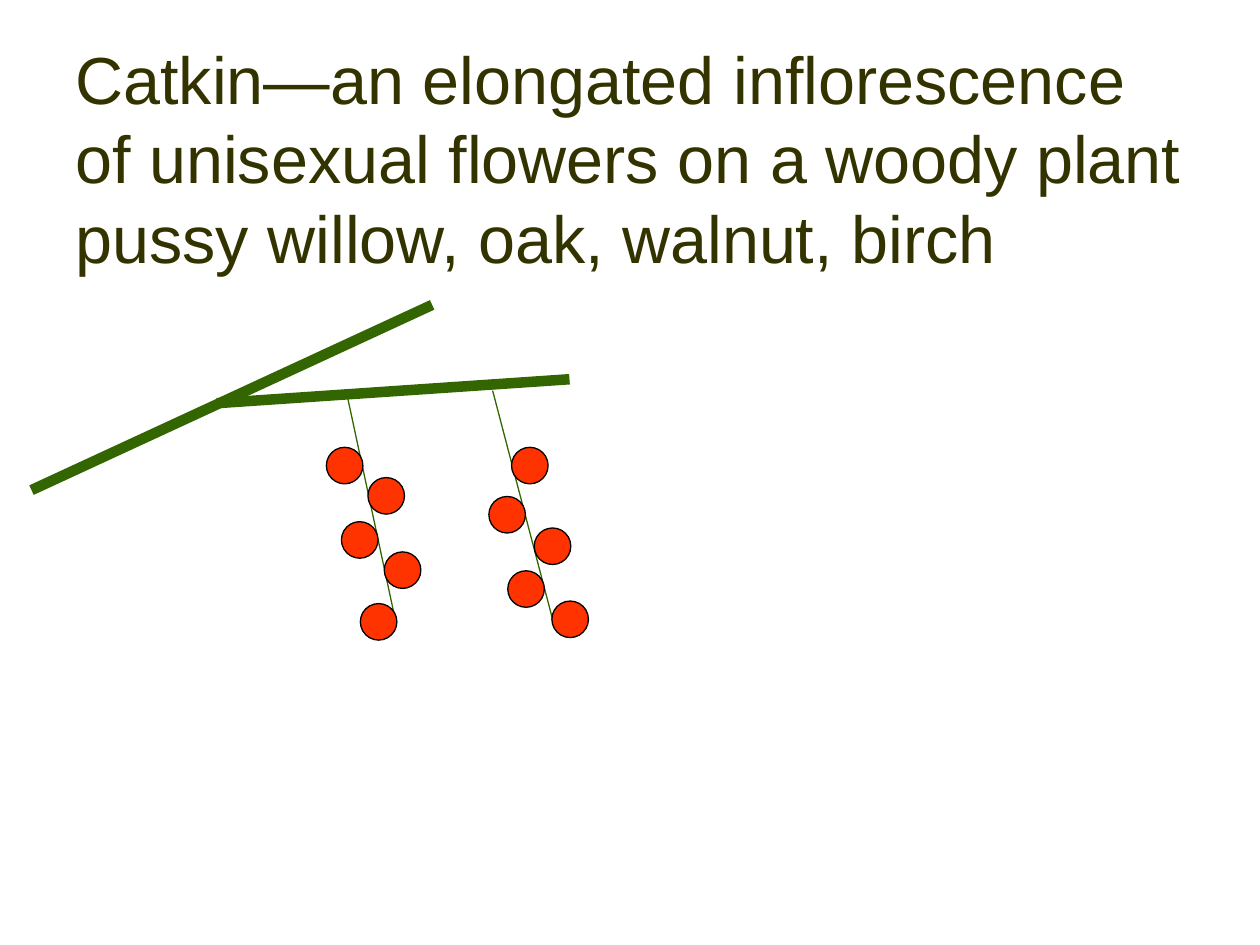
from pptx import Presentation
from pptx import util as u
from pptx.dml.color import RGBColor
from pptx.enum import shapes, text
from pptx.oxml import ns
from lxml import etree

COLORS = {"title": "333300", "stem": "336600", "flower": "FF3300", "outline": "000000"}
COLUMNS, ROWS = 100, 75  # grid laid over the whole slide
FLOWER_SIZE = 2.9


class CatkinSlide:
    font = "Arial"
    title_size = 38
    title_leading = 45.5

    def __init__(self, deck):
        self.deck = deck
        self.page = deck.slides.add_slide(deck.slide_layouts[6])
        self.plant = self.page.shapes.add_group_shape()

    def x(self, columns):
        return round(self.deck.slide_width * columns / COLUMNS)

    def y(self, rows):
        return round(self.deck.slide_height * rows / ROWS)

    def color(self, name):
        return RGBColor.from_string(COLORS[name])

    def title(self, left, top, width, height, words):
        box = self.page.shapes.add_textbox(self.x(left), self.y(top), self.x(width), self.y(height))
        frame = box.text_frame
        frame.word_wrap = True
        frame.margin_top = frame.margin_bottom = 0
        frame.vertical_anchor = text.MSO_ANCHOR.TOP
        frame.text = words
        para = frame.paragraphs[0]
        para.line_spacing = u.Pt(self.title_leading)
        span = para.runs[0]
        span.font.name = self.font
        span.font.size = u.Pt(self.title_size)
        span.font.color.rgb = self.color("title")

    def stem(self, start, end, weight):
        line = self.plant.shapes.add_connector(
            shapes.MSO_CONNECTOR.STRAIGHT,
            self.x(start[0]), self.y(start[1]), self.x(end[0]), self.y(end[1]))
        line.line.color.rgb = self.color("stem")
        line.line.width = u.Pt(weight)
        properties = line._element.find(ns.qn("p:spPr"))
        etree.SubElement(properties, ns.qn("a:effectLst"))

    def flower(self, left, top):
        circle = self.plant.shapes.add_shape(
            shapes.MSO_SHAPE.OVAL, self.x(left), self.y(top),
            self.x(FLOWER_SIZE), self.y(FLOWER_SIZE))
        circle.shadow.inherit = False
        circle.fill.solid()
        circle.fill.fore_color.rgb = self.color("flower")
        circle.line.color.rgb = self.color("outline")
        circle.line.width = u.Pt(0.75)

    def catkin(self, start, end, flowers):
        self.stem(start, end, 0.75)
        for left, top in flowers:
            self.flower(left, top)


def main():
    deck = Presentation()
    deck.slide_width, deck.slide_height = u.Inches(10), u.Inches(7.5)
    slide = CatkinSlide(deck)

    # Definition and examples
    slide.title(5, 3, 90, 19.5,
                "Catkin—an elongated inflorescence of unisexual flowers on a woody plant "
                "pussy willow, oak, walnut, birch")

    # Woody branches
    slide.stem((34.3, 24.2), (2.5, 38.9), 6)
    slide.stem((17.2, 32), (45.2, 30.1), 6)

    # Hanging catkins, flowers from top to bottom
    slide.catkin((27.6, 31.6), (31.4, 49.3),
                 [(25.9, 35.5), (29.2, 37.9), (27.1, 41.4), (30.5, 43.8), (28.6, 47.9)])
    slide.catkin((39.1, 31), (44, 49.7),
                 [(40.6, 35.5), (38.8, 39.4), (42.4, 41.9), (40.3, 45.3), (43.8, 47.7)])

    deck.save("out.pptx")


if __name__ == "__main__":
    main()
